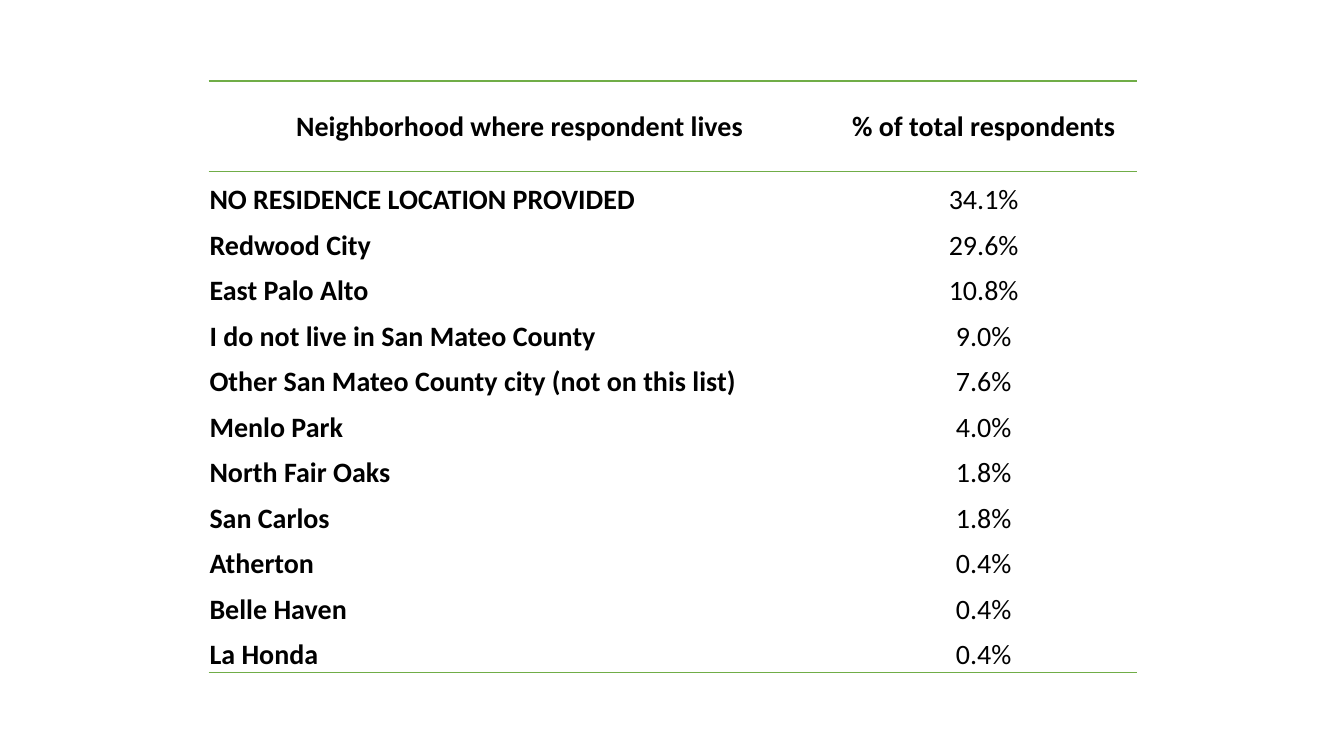
from lxml.etree import SubElement
from pptx import Presentation
from pptx.dml.color import RGBColor
from pptx.enum.text import MSO_ANCHOR, PP_ALIGN
from pptx.oxml import parse_xml
from pptx.oxml.ns import nsdecls, qn
from pptx.util import Cm, Pt

BLACK = RGBColor(0x00, 0x00, 0x00)
GREEN = RGBColor(0x70, 0xAD, 0x47)
PLAIN_STYLE = "{2D5ABB26-0587-4C30-8999-92F81FD0307C}"

residences = [
    ("Neighborhood where respondent lives", "% of total respondents"),
    ("NO RESIDENCE LOCATION PROVIDED", "34.1%"),
    ("Redwood City", "29.6%"),
    ("East Palo Alto", "10.8%"),
    ("I do not live in San Mateo County", "9.0%"),
    ("Other San Mateo County city (not on this list)", "7.6%"),
    ("Menlo Park", "4.0%"),
    ("North Fair Oaks", "1.8%"),
    ("San Carlos", "1.8%"),
    ("Atherton", "0.4%"),
    ("Belle Haven", "0.4%"),
    ("La Honda", "0.4%"),
]
last_row = len(residences) - 1
header_height, row_height = Cm(2.29), Cm(1.147)
place_width, share_width = Cm(15.67), Cm(7.72)


def add_rules(cell, edges):
    properties = cell._tc.get_or_add_tcPr()
    for position, edge in enumerate(edges):
        rule = parse_xml(
            f'<a:{edge} {nsdecls("a")} w="12700"><a:solidFill>'
            f'<a:srgbClr val="{GREEN}"/></a:solidFill></a:{edge}>'
        )
        properties.insert(position, rule)


presentation = Presentation()
presentation.slide_width = Cm(33.87)
presentation.slide_height = Cm(19.05)
slide = presentation.slides.add_slide(presentation.slide_layouts[6])

survey = slide.shapes.add_table(
    len(residences), 2, Cm(5.26), Cm(2.04),
    place_width + share_width, header_height + last_row * row_height,
).table
survey.horz_banding = False
table_properties = survey._tbl.tblPr
style = table_properties.find(qn("a:tableStyleId"))
if style is None:
    style = SubElement(table_properties, qn("a:tableStyleId"))
style.text = PLAIN_STYLE
survey.columns[0].width = place_width
survey.columns[1].width = share_width

for row, answers in enumerate(residences):
    is_header = row == 0
    survey.rows[row].height = header_height if is_header else row_height
    for column, answer in enumerate(answers):
        cell = survey.cell(row, column)
        cell.fill.background()
        cell.margin_left = cell.margin_right = cell.margin_top = Cm(0.02)
        cell.margin_bottom = 0
        cell.vertical_anchor = MSO_ANCHOR.MIDDLE if is_header else MSO_ANCHOR.BOTTOM
        cell.text_frame.text = answer
        paragraph = cell.text_frame.paragraphs[0]
        is_place = column == 0 and not is_header
        paragraph.alignment = PP_ALIGN.LEFT if is_place else PP_ALIGN.CENTER
        font = paragraph.runs[0].font
        font.name = "Calibri"
        font.size = Pt(20)
        font.bold = is_header or is_place
        font.color.rgb = BLACK
        if is_header:
            add_rules(cell, ["lnT", "lnB"])
        elif row == last_row:
            add_rules(cell, ["lnB"])

presentation.save("out.pptx")
